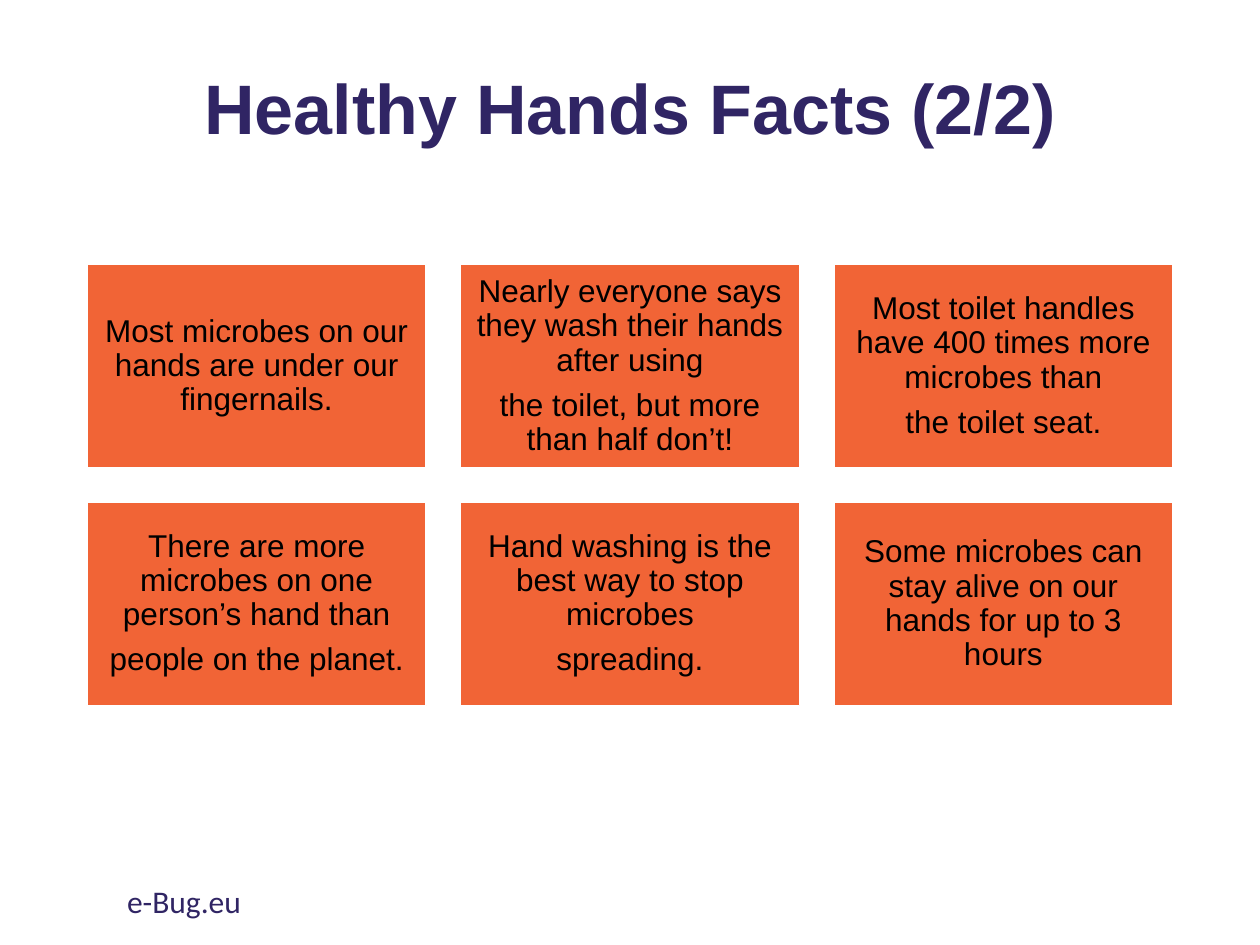
import pptx
import pptx.util
import pptx.dml.color
import pptx.enum.shapes
import pptx.enum.text

Inches = pptx.util.Inches
Pt = pptx.util.Pt
RGBColor = pptx.dml.color.RGBColor
ALIGN = pptx.enum.text.PP_ALIGN
ANCHOR = pptx.enum.text.MSO_ANCHOR

NAVY = RGBColor(0x30, 0x25, 0x64)
ORANGE = RGBColor(0xF1, 0x64, 0x36)
BLACK = RGBColor(0, 0, 0)
WHITE = RGBColor(0xFF, 0xFF, 0xFF)

FACTS = [
    ["Most microbes on our hands are under our fingernails."],
    ["Nearly everyone says they wash their hands after using",
     "the toilet, but more than half don’t!"],
    ["Most toilet handles have 400 times more microbes than",
     "the toilet seat."],
    ["There are more microbes on one person’s hand than",
     "people on the planet."],
    ["Hand washing is the best way to stop microbes",
     "spreading."],
    ["Some microbes can stay alive on our hands for up to 3 hours"],
]

TITLE = {"name": "Arial", "size": Pt(40), "bold": True}
FACT = {"name": "Arial", "size": Pt(18)}
FOOT = {"name": "Calibri", "size": Pt(18)}
CENTER = {"alignment": ALIGN.CENTER, "line_spacing": 0.9}
SPACED = {**CENTER, "space_after": Pt(6.3)}
MIDDLE = {"word_wrap": True, "vertical_anchor": ANCHOR.MIDDLE}
INSET = {f"margin_{side}": Inches(0.07)
         for side in ("left", "top", "right", "bottom")}


def style(item, form):
    for key, value in form.items():
        setattr(item, key, value)


def write(shape, lines, frame, para, font, color):
    body = shape.text_frame
    style(body, frame)
    body.text = "\n".join(lines)
    for line in body.paragraphs:
        style(line, para)
        style(line.font, font)
        line.font.color.rgb = color


def add_title(slide, left, top, width, height):
    box = slide.shapes.add_textbox(left, top, width, height)
    write(box, ["Healthy Hands Facts (2/2)"], MIDDLE, CENTER, TITLE, NAVY)


def add_card(slide, left, top, width, height, lines):
    card = slide.shapes.add_shape(
        pptx.enum.shapes.MSO_SHAPE.RECTANGLE, left, top, width, height)
    card.shadow.inherit = False
    card.fill.solid()
    card.fill.fore_color.rgb = ORANGE
    card.line.color.rgb = WHITE
    card.line.width = Pt(1)
    write(card, lines, {**MIDDLE, **INSET}, SPACED, FACT, BLACK)


def add_facts(slide, left, top, width, height):
    # Three columns, with the same gap across and down
    cols, gap = 3, Inches(0.27)
    rows = len(FACTS) // cols
    wide = (width - gap * (cols - 1)) // cols
    high = (height - gap * (rows - 1)) // rows
    for index, lines in enumerate(FACTS):
        row, col = divmod(index, cols)
        add_card(slide, left + col * (wide + gap), top + row * (high + gap),
                 wide, high, lines)


def add_foot(slide, left, top, width, height):
    box = slide.shapes.add_textbox(left, top, width, height)
    write(box, ["e-Bug.eu"], {"word_wrap": True}, {}, FOOT, NAVY)


def main():
    deck = pptx.Presentation()
    deck.slide_width = Inches(10)
    deck.slide_height = Inches(7.5)
    slide = deck.slides.add_slide(deck.slide_layouts[6])
    # Heading, grid of facts, site address
    add_title(slide, Inches(0.69), Inches(0.4), Inches(8.62), Inches(0.98))
    add_facts(slide, Inches(0.69), Inches(2.1), Inches(8.62), Inches(3.5))
    add_foot(slide, Inches(0.91), Inches(6.95), Inches(3.38), Inches(0.4))
    deck.save("out.pptx")


if __name__ == "__main__":
    main()
